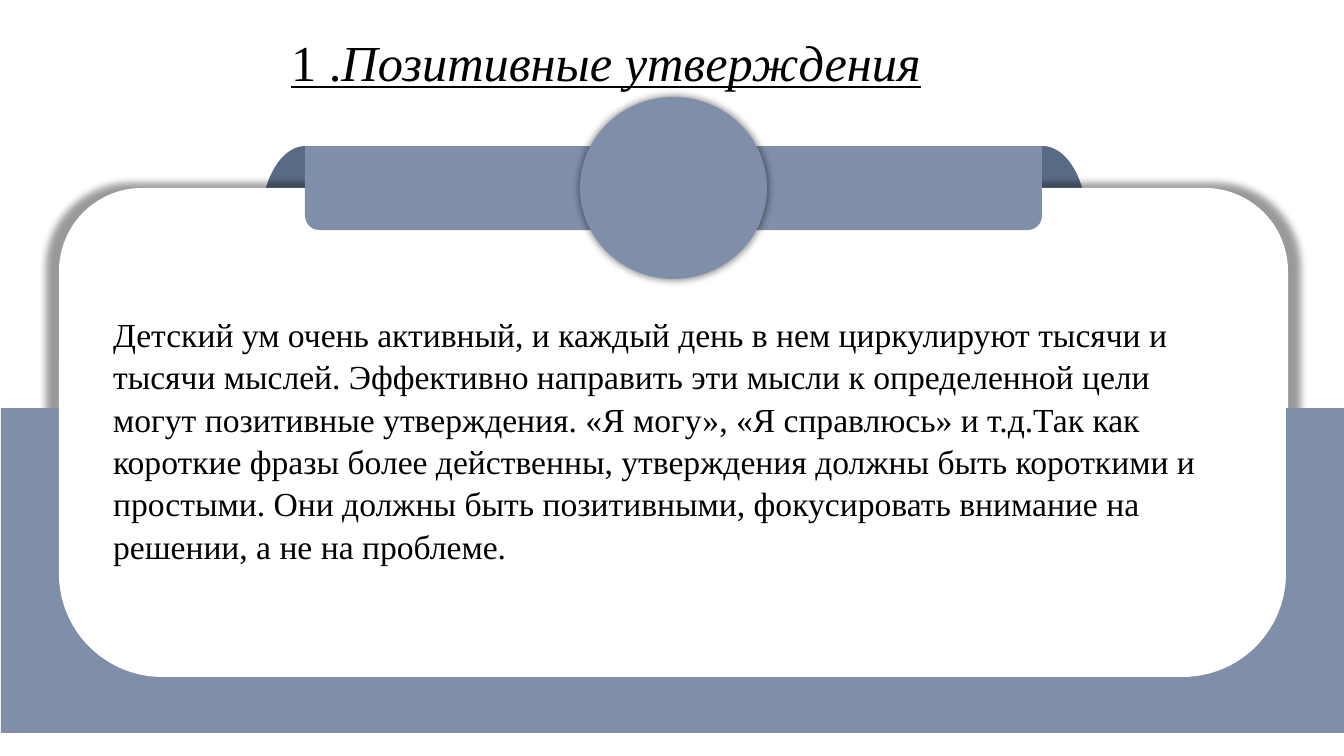
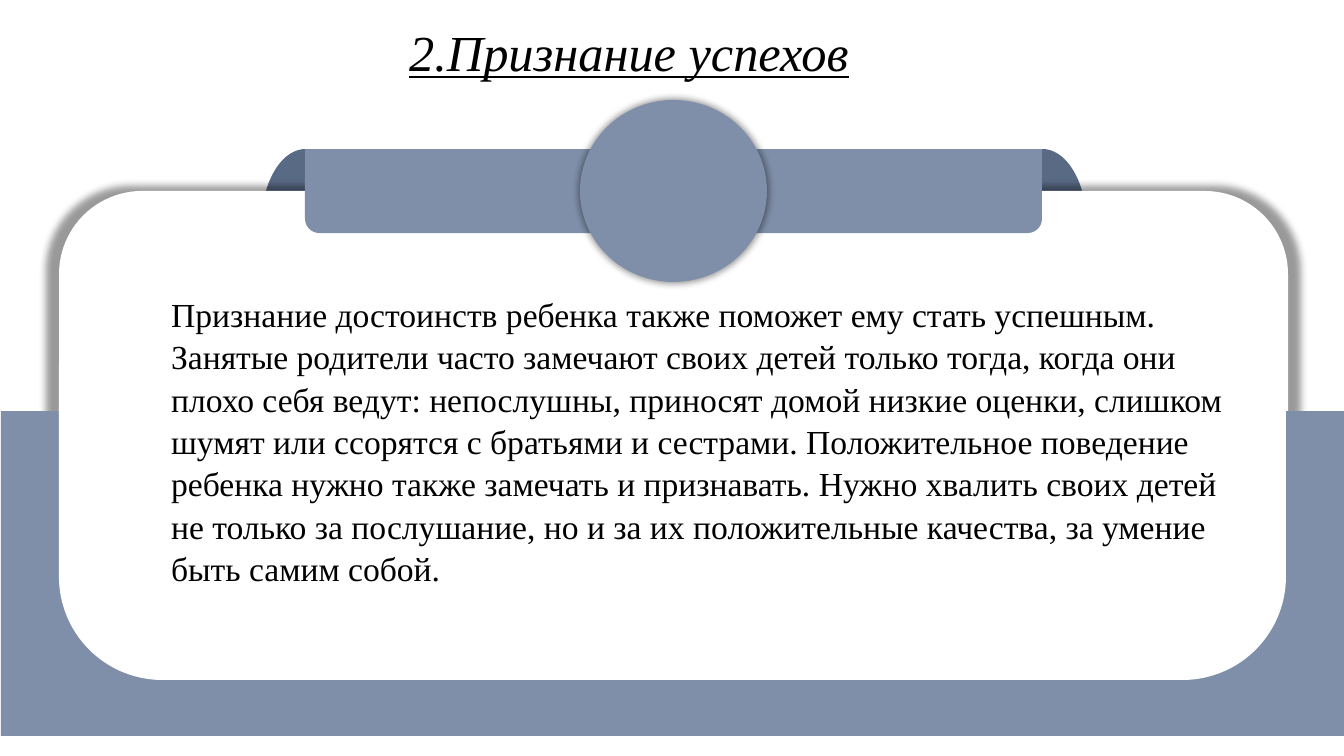
"""Build two slides that share a rounded card, a ribbon and a badge."""
import dataclasses

import lxml.etree
import pptx
import pptx.dml.color
import pptx.enum.shapes
import pptx.enum.text
import pptx.oxml.ns
import pptx.util

PX = pptx.util.Inches(1) / 100.8
SLIDE_WIDTH, SLIDE_HEIGHT = 1344, 756
SHAPE = pptx.enum.shapes.MSO_SHAPE


@dataclasses.dataclass(frozen=True)
class Theme:
    font: str = "Times New Roman"
    title_size: int = 36
    body_size: int = 24
    body_spacing: float = 1.05
    text: str = "000000"
    card: str = "FFFFFF"
    accent: str = "7F8FA9"
    fold: str = "596A85"
    shadow: str = "000000"


THEME = Theme()

SLIDES = [
    {
        "card_top": 188,
        "title_area": (281, 26, 781, 72),
        "title": [("1 .", False), ("Позитивные утверждения", True)],
        "body_area": (103, 307, 1142, 254),
        "body": "Детский ум очень активный, и каждый день в нем циркулируют тысячи и "
                "тысячи мыслей. Эффективно направить эти мысли к определенной цели могут "
                "позитивные утверждения. «Я могу», «Я справлюсь» и т.д.Так как короткие "
                "фразы более действенны, утверждения должны быть короткими и простыми. "
                "Они должны быть позитивными, фокусировать внимание на решении, а не на "
                "проблеме.",
    },
    {
        "card_top": 191,
        "title_area": (399, 16, 477, 72),
        "title": [("2.Признание успехов", True)],
        "body_area": (161, 287, 1076, 295),
        "body": "Признание достоинств ребенка также поможет ему стать успешным. Занятые "
                "родители часто замечают своих детей только тогда, когда они плохо себя "
                "ведут: непослушны, приносят домой низкие оценки, слишком шумят или "
                "ссорятся с братьями и сестрами. Положительное поведение ребенка нужно "
                "также замечать и признавать. Нужно хвалить своих детей не только за "
                "послушание, но и за их положительные качества, за умение быть самим собой.",
    },
]


def px(length):
    return pptx.util.Emu(round(length * PX))


def add_child(parent, tag, **attributes):
    child = lxml.etree.SubElement(parent, pptx.oxml.ns.qn(tag))
    for name, value in attributes.items():
        child.set(name, str(value))
    return child


def add_glow(shape):
    effects = shape.element.spPr.find(pptx.oxml.ns.qn("a:effectLst"))
    glow = add_child(effects, "a:outerShdw", blurRad=pptx.util.Pt(5),
                     sx=102000, sy=102000, algn="ctr", rotWithShape=0)
    color = add_child(glow, "a:srgbClr", val=THEME.shadow)
    add_child(color, "a:alpha", val=40000)


def add_block(page, kind, area, color, corners=(), glow=False):
    shape = page.shapes.add_shape(kind, *map(px, area))
    shape.fill.solid()
    shape.fill.fore_color.rgb = pptx.dml.color.RGBColor.from_string(color)
    shape.line.fill.background()
    shape.shadow.inherit = False
    for index, corner in enumerate(corners):
        shape.adjustments[index] = corner
    if glow:
        add_glow(shape)


def add_card(page, top):
    for left in (261, 998):
        add_block(page, SHAPE.OVAL, (left, top - 42, 89, 154), THEME.fold)
    add_block(page, SHAPE.ROUNDED_RECTANGLE, (59, top, 1229, 489), THEME.card,
              (0.17,), glow=True)
    add_block(page, SHAPE.ROUND_2_SAME_RECTANGLE, (305, top - 42, 737, 84),
              THEME.accent, (0, 0.17))
    add_block(page, SHAPE.OVAL, (580, top - 91, 187, 182), THEME.accent, glow=True)
    add_block(page, SHAPE.RECTANGLE, (1, top + 220, SLIDE_WIDTH - 1, 325), THEME.accent)
    add_block(page, SHAPE.ROUND_2_SAME_RECTANGLE, (59, top + 217, 1227, 272),
              THEME.card, (0, 0.38))


def fill_placeholder(page, box, area, spans, size, spacing=1.0, underline=False):
    page.shapes.element.append(box.element)
    box.left, box.top, box.width, box.height = map(px, area)
    frame = box.text_frame
    frame.word_wrap = True
    frame.auto_size = pptx.enum.text.MSO_AUTO_SIZE.NONE
    frame.vertical_anchor = pptx.enum.text.MSO_ANCHOR.TOP
    para = frame.paragraphs[0]
    para.alignment = pptx.enum.text.PP_ALIGN.LEFT
    para.line_spacing = spacing
    para.space_before = pptx.util.Pt(0)
    settings = para.alignment is not None and para._p.get_or_add_pPr()
    settings.set("marL", "0")
    settings.set("indent", "0")
    add_child(settings, "a:buNone")
    for text, italic in spans:
        span = para.add_run()
        span.text = text
        span.font.name = THEME.font
        span.font.size = pptx.util.Pt(size)
        span.font.italic = italic
        span.font.underline = underline
        span.font.color.rgb = pptx.dml.color.RGBColor.from_string(THEME.text)


def add_page(deck, content):
    page = deck.slides.add_slide(deck.slide_layouts[1])
    add_card(page, content["card_top"])
    fill_placeholder(page, page.shapes.title, content["title_area"],
                     content["title"], THEME.title_size, underline=True)
    fill_placeholder(page, page.placeholders[1], content["body_area"],
                     [(content["body"], False)], THEME.body_size, THEME.body_spacing)


def main():
    deck = pptx.Presentation()
    deck.slide_width, deck.slide_height = px(SLIDE_WIDTH), px(SLIDE_HEIGHT)
    for content in SLIDES:
        add_page(deck, content)
    deck.save("out.pptx")


if __name__ == "__main__":
    main()
